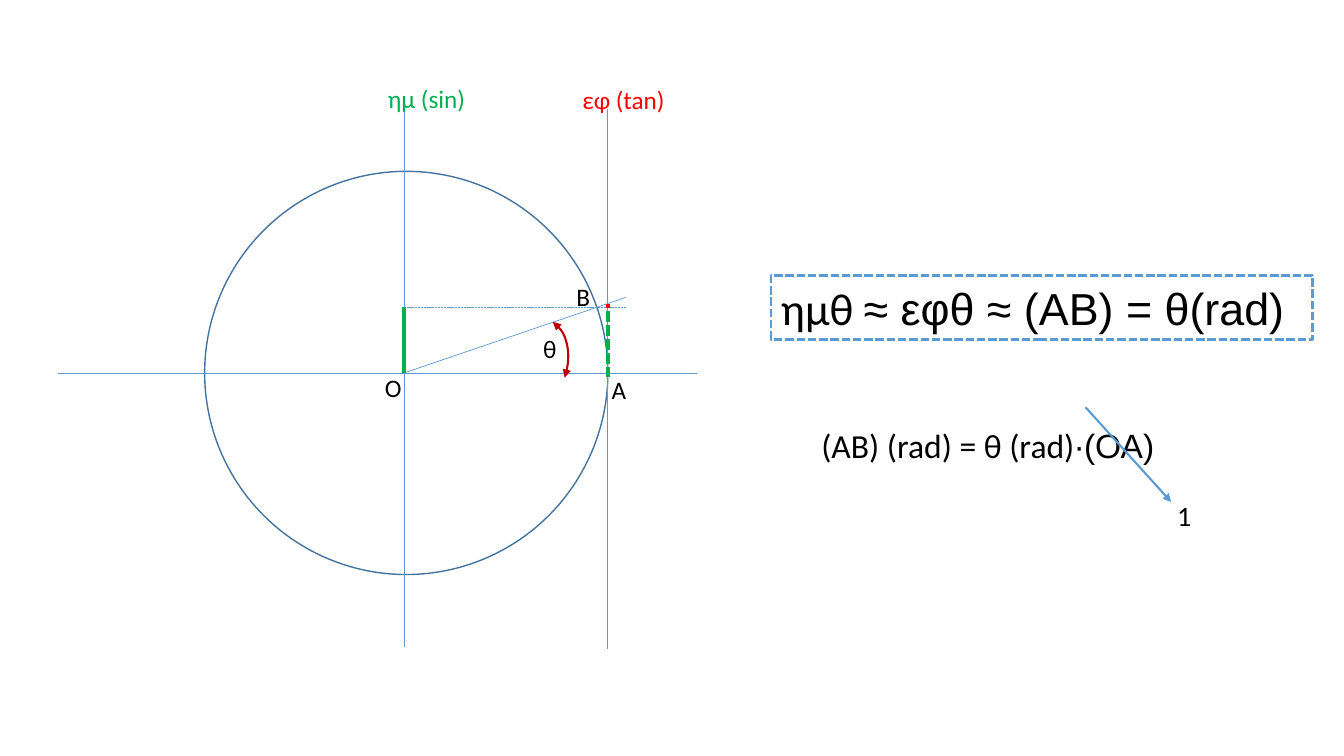
"""Draw the unit circle and the small-angle approximation on one slide."""
from dataclasses import dataclass

from lxml import etree
from pptx import Presentation
from pptx.dml.color import RGBColor
from pptx.enum.dml import MSO_LINE
from pptx.enum.shapes import MSO_CONNECTOR, MSO_SHAPE
from pptx.enum.text import MSO_ANCHOR, MSO_AUTO_SIZE, PP_ALIGN
from pptx.oxml.ns import qn
from pptx.shapes.autoshape import Shape
from pptx.shapes.shapetree import GroupShapes, SlideShapes
from pptx.util import Pt

STRAIGHT = MSO_CONNECTOR.STRAIGHT
RECTANGLE, OVAL, ARC = MSO_SHAPE.RECTANGLE, MSO_SHAPE.OVAL, MSO_SHAPE.ARC
SHORT_DASH = MSO_LINE.SQUARE_DOT
MIDDLE, LEFT, GROW = MSO_ANCHOR.MIDDLE, PP_ALIGN.LEFT, MSO_AUTO_SIZE.SHAPE_TO_FIT_TEXT

WHITE = RGBColor(0xFF, 0xFF, 0xFF)
BLACK = RGBColor(0x00, 0x00, 0x00)
BLUE = RGBColor(0x5B, 0x9B, 0xD5)
CIRCLE_BLUE = RGBColor(0x43, 0x73, 0x9E)
GREEN = RGBColor(0x00, 0xB0, 0x50)
RED = RGBColor(0xFF, 0x00, 0x00)
DARK_RED = RGBColor(0xC0, 0x00, 0x00)

BODY_FONT, SYMBOL_FONT = "Calibri", "Arial"

SINE_X, TANGENT_X, RAY_END_X = 288.7, 434.2, 447.1
AXIS_Y, SINE_Y = 266.4, 219.6
AXIS_LENGTH = 385.9
RADIUS = 144

Shapes = SlideShapes | GroupShapes


@dataclass(frozen=True)
class Stroke:
    """A straight line between two points."""
    start: tuple[float, float]
    end: tuple[float, float]
    color: RGBColor = BLUE
    width: float = 0.5
    dashed: bool = False
    ends: tuple[str, ...] = ()


@dataclass(frozen=True)
class Label:
    """A short text in its frame, with an optional part in the symbol font."""
    frame: tuple[float, float, float, float]
    text: str
    symbols: str = ""
    size: float = 18
    color: RGBColor = BLACK


DIAGRAM_STROKES = (
    Stroke((SINE_X, 76.3), (SINE_X, 76.3 + AXIS_LENGTH)),
    Stroke((41.8, AXIS_Y), (498.2, AXIS_Y)),
    Stroke((TANGENT_X, 77.8), (TANGENT_X, 77.8 + AXIS_LENGTH)),
    Stroke((SINE_X, AXIS_Y), (RAY_END_X, 212.4)),
    Stroke((RAY_END_X, SINE_Y), (SINE_X, SINE_Y), dashed=True),
    Stroke((TANGENT_X, 220.3), (TANGENT_X, 217.4), RED, 2.5),
    Stroke((SINE_X, SINE_Y), (SINE_X, AXIS_Y), GREEN, 3),
    Stroke((TANGENT_X, 222.5), (TANGENT_X, 269.3), GREEN, 2.5, dashed=True),
)
DIAGRAM_LABELS = (
    Label((270, 56.2, 70.6, 29), "ημ (sin)", color=GREEN),
    Label((409, 56.9, 74.2, 29), "εφ (tan)", color=RED),
    Label((380.9, 234.7, 24.5, 29), "θ"),
    Label((429.8, 263.5, 25.2, 29), "Α"),
    Label((404.6, 197.3, 24.5, 29), "Β"),
    Label((267.8, 262.1, 26.6, 29), "Ο"),
)
APPROXIMATION = Label((550.8, 196.6, 386.6, 46), "ημθ ", "≈ εφθ ≈ (ΑΒ) = θ(rad)", 32)
ARC_LENGTH = Label((579.6, 300.2, 254.2, 36), "(ΑΒ) (rad) = θ (rad)", "∙(ΟΑ)", 24)
UNIT_RADIUS = Label((833.8, 352.8, 24.5, 31.5), "1", size=20)
RADIUS_ARROW = Stroke((775.4, 290.9), (836.6, 358.6), width=1.5, ends=("tailEnd",))


def format_line(item, color: RGBColor, width: float, dashed: bool = False,
                ends: tuple[str, ...] = ()) -> None:
    """Set the outline of a shape or connector, arrowheads included."""
    item.line.color.rgb = color
    item.line.width = Pt(width)
    if dashed:
        item.line.dash_style = SHORT_DASH
    outline = item.element.spPr.find(qn("a:ln"))
    for end in ends:
        etree.SubElement(outline, qn(f"a:{end}"), type="triangle")


def draw_stroke(shapes: Shapes, stroke: Stroke) -> None:
    """Draw one straight line without a shadow."""
    points = [Pt(value) for value in (*stroke.start, *stroke.end)]
    connector = shapes.add_connector(STRAIGHT, *points)
    format_line(connector, stroke.color, stroke.width, stroke.dashed, stroke.ends)
    etree.SubElement(connector.element.spPr, qn("a:effectLst"))


def draw_outline(shapes: Shapes, kind: MSO_SHAPE, frame: tuple[float, ...]) -> Shape:
    """Add an unfilled preset shape without a shadow."""
    shape = shapes.add_shape(kind, *map(Pt, frame))
    shape.shadow.inherit = False
    shape.fill.background()
    return shape


def write_text(box: Shape, text: str, *, symbols: str, size: float, color: RGBColor) -> None:
    """Write one unwrapped line of text in a box."""
    box.text_frame.word_wrap = False
    box.text_frame.auto_size = GROW
    para = box.text_frame.paragraphs[0]
    para.alignment = LEFT
    for content, font_name in ((text, BODY_FONT), (symbols, SYMBOL_FONT)):
        if content:
            span = para.add_run()
            span.text = content
            span.font.name = font_name
            span.font.size = Pt(size)
            span.font.color.rgb = color


def write_label(box: Shape, label: Label) -> None:
    """Write a label in the box made for it."""
    write_text(box, label.text, symbols=label.symbols, size=label.size, color=label.color)


def draw_label(shapes: Shapes, label: Label) -> None:
    """Add a text box for a label."""
    write_label(shapes.add_textbox(*map(Pt, label.frame)), label)


def draw_approximation(shapes: Shapes) -> None:
    """Draw the dashed frame with the main formula."""
    box = draw_outline(shapes, RECTANGLE, APPROXIMATION.frame)
    box.fill.solid()
    box.fill.fore_color.rgb = WHITE
    format_line(box, BLUE, 2, dashed=True)
    box.text_frame.vertical_anchor = MIDDLE
    write_label(box, APPROXIMATION)


def draw_angle(shapes: Shapes) -> None:
    """Draw the double-headed arc that marks the angle."""
    angle = draw_outline(shapes, ARC, (321.1, 235.4, 93.6, 65.5))
    angle.adjustments[0] = 181.46
    angle.adjustments[1] = 0
    angle.rotation = 125.1
    angle.element.spPr.find(qn("a:xfrm")).set("flipH", "1")
    format_line(angle, DARK_RED, 1.5, ends=("headEnd", "tailEnd"))


def draw_diagram(shapes: Shapes) -> None:
    """Draw the unit circle with its axes, segments and labels."""
    circle = draw_outline(shapes, OVAL, (146.2, AXIS_Y - RADIUS, 2 * RADIUS, 2 * RADIUS))
    format_line(circle, CIRCLE_BLUE, 1)
    for stroke in DIAGRAM_STROKES:
        draw_stroke(shapes, stroke)
    draw_angle(shapes)
    for label in DIAGRAM_LABELS:
        draw_label(shapes, label)


def main() -> None:
    """Build the deck and save it."""
    deck = Presentation()
    deck.slide_width, deck.slide_height = Pt(960), Pt(540)
    page = deck.slides.add_slide(deck.slide_layouts[6])
    draw_approximation(page.shapes)
    draw_diagram(page.shapes.add_group_shape().shapes)
    draw_label(page.shapes, ARC_LENGTH)
    draw_stroke(page.shapes, RADIUS_ARROW)
    draw_label(page.shapes, UNIT_RADIUS)
    deck.save("out.pptx")


if __name__ == "__main__":
    main()
